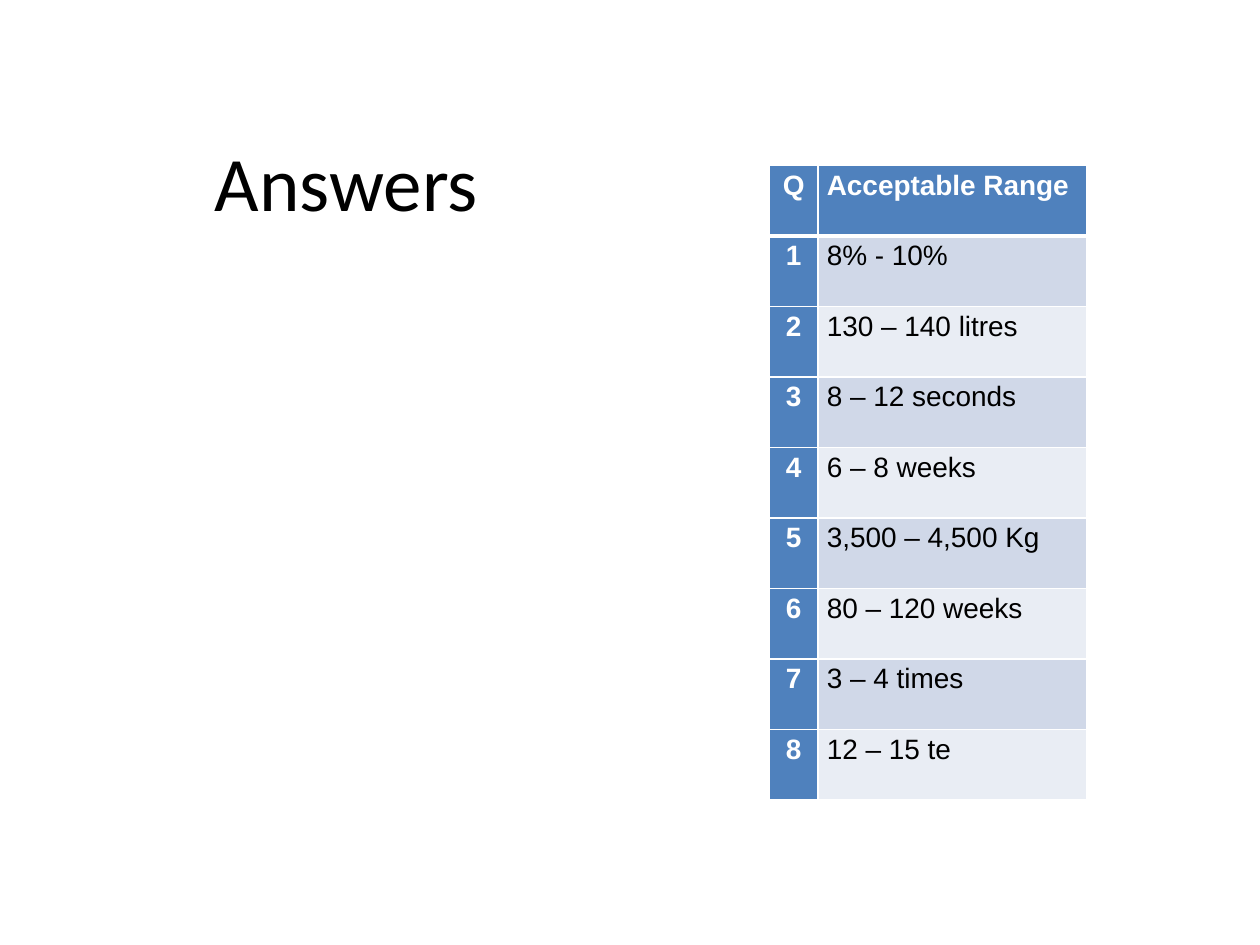
from pptx import Presentation
from pptx.dml.color import RGBColor
from pptx.enum.text import MSO_ANCHOR, PP_ALIGN
from pptx.oxml.ns import qn
from pptx.util import Pt
from lxml.etree import SubElement

BLACK = RGBColor(0x00, 0x00, 0x00)
WHITE = RGBColor(0xFF, 0xFF, 0xFF)
BLUE = RGBColor(0x4F, 0x81, 0xBD)
BANDS = RGBColor(0xD0, 0xD8, 0xE8), RGBColor(0xE9, 0xED, 0xF4)

RANGES = [
    "8% - 10%",
    "130 – 140 litres",
    "8 – 12 seconds",
    "6 – 8 weeks",
    "3,500 – 4,500 Kg",
    "80 – 120 weeks",
    "3 – 4 times",
    "12 – 15 te",
]


class Page:
    title_font = {"name": "Calibri", "size": Pt(44), "bold": False}
    cell_font = {"name": "Arial", "size": Pt(16)}
    pads = {"margin_left": Pt(5), "margin_right": Pt(5), "margin_top": 0, "margin_bottom": 0}

    def __init__(self, slide):
        self.slide = slide

    def set_all(self, item, values):
        for name, value in values.items():
            setattr(item, name, value)

    def label(self, para, text, font, color, align):
        run = para.add_run()
        run.text = text
        self.set_all(run.font, font)
        run.font.color.rgb = color
        para.alignment = align

    def title(self, text, left, top, width, height):
        shape = self.slide.shapes.title
        box = {"left": left, "top": top, "width": width, "height": height}
        self.set_all(shape, {name: Pt(value) for name, value in box.items()})
        frame = shape.text_frame
        self.set_all(frame, {"word_wrap": True, "vertical_anchor": MSO_ANCHOR.MIDDLE})
        self.label(frame.paragraphs[0], text, self.title_font, BLACK, PP_ALIGN.CENTER)

    def border(self, cell, row):
        heavy = {0: "B", 1: "T"}.get(row)
        props = cell._tc.get_or_add_tcPr()
        for side in "LRTB":
            width = Pt(3 if side == heavy else 1)
            line = SubElement(props, qn(f"a:ln{side}"), w=str(width))
            fill = SubElement(line, qn("a:solidFill"))
            SubElement(fill, qn("a:srgbClr"), val=str(WHITE))

    def cell(self, cell, text, row, col):
        head = row == 0 or col == 0
        self.set_all(cell, self.pads)
        self.border(cell, row)
        cell.fill.solid()
        cell.fill.fore_color.rgb = BLUE if head else BANDS[(row - 1) % 2]
        para = cell.text_frame.paragraphs[0]
        para.line_spacing = 1.15
        align = PP_ALIGN.LEFT if col else PP_ALIGN.CENTER
        font = {**self.cell_font, "bold": head}
        self.label(para, text, font, WHITE if head else BLACK, align)

    def table(self, rows, left, top, widths, height):
        size = Pt(sum(widths)), Pt(height * len(rows))
        frame = self.slide.shapes.add_table(len(rows), len(widths), Pt(left), Pt(top), *size)
        grid = frame.table
        grid.first_col = True
        for col, width in zip(grid.columns, widths):
            col.width = Pt(width)
        for r, texts in enumerate(rows):
            grid.rows[r].height = Pt(height)
            for c, text in enumerate(texts):
                self.cell(grid.cell(r, c), text, r, c)


def main():
    deck = Presentation()
    deck.slide_width, deck.slide_height = Pt(720), Pt(540)
    slide = deck.slides.add_slide(deck.slide_layouts[0])
    empty = slide.placeholders[1].element
    empty.getparent().remove(empty)

    page = Page(slide)
    page.title("Answers", 70.5, 66, 255, 74)
    answers = [(str(n), text) for n, text in enumerate(RANGES, 1)]
    page.table([("Q", "Acceptable Range"), *answers], 439.5, 94.5, [28, 153.5], 40.3)
    deck.save("out.pptx")


if __name__ == "__main__":
    main()
